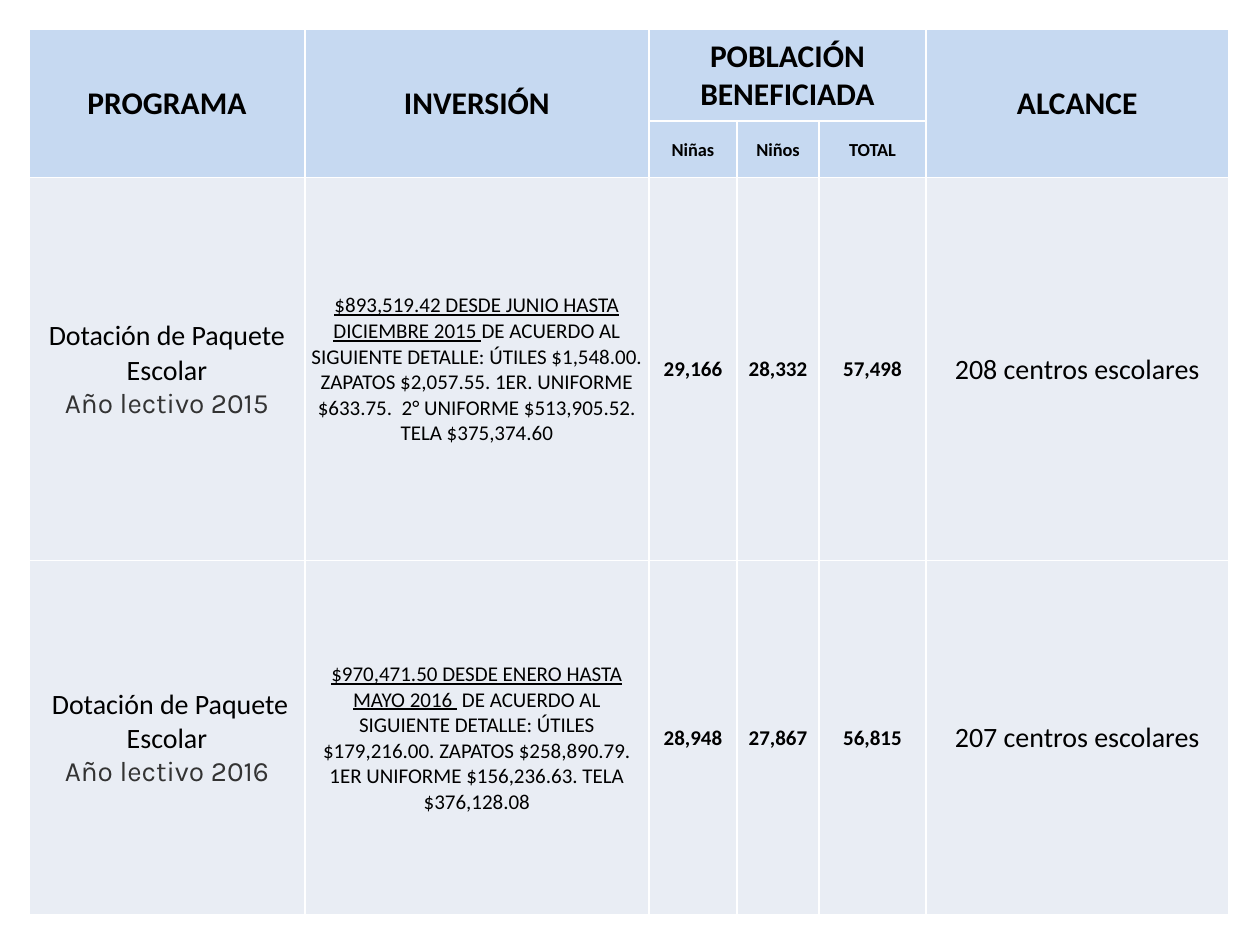
from lxml.etree import SubElement
from pptx import Presentation
from pptx.dml.color import RGBColor
from pptx.enum.text import MSO_ANCHOR, PP_ALIGN
from pptx.oxml.ns import qn
from pptx.util import Inches, Pt

COLORS = {
    "header": "C6D9F1",
    "body": "E9EDF4",
    "border": "FFFFFF",
    "text": "000000",
    "year": "333333",
}
COLUMN_WIDTHS = [2.19, 2.73, 0.7, 0.65, 0.85, 2.4]
ROW_HEIGHTS = [0.73, 0.45, 3.04, 2.81]
MARGIN = 0.23
HEADER_ROWS = 2

MAIN_HEADERS = {0: "PROGRAMA", 1: "INVERSIÓN", 2: "POBLACIÓN BENEFICIADA", 5: "ALCANCE"}
POPULATION_HEADERS = ["Niñas", "Niños", "TOTAL"]
PROGRAMS = [
    {
        "name": "Dotación de Paquete Escolar",
        "year": "Año lectivo 2015",
        "amount": "$893,519.42 DESDE JUNIO HASTA DICIEMBRE 2015 ",
        "detail": "DE ACUERDO AL SIGUIENTE DETALLE: ÚTILES $1,548.00. ZAPATOS $2,057.55. "
                  "1ER. UNIFORME $633.75.  2° UNIFORME $513,905.52. TELA $375,374.60",
        "population": ["29,166", "28,332", "57,498"],
        "reach": "208 centros escolares",
    },
    {
        "name": " Dotación de Paquete Escolar",
        "year": "Año lectivo 2016",
        "amount": "$970,471.50 DESDE ENERO HASTA MAYO 2016 ",
        "detail": " DE ACUERDO AL SIGUIENTE DETALLE: ÚTILES $179,216.00. ZAPATOS $258,890.79. "
                  "1ER UNIFORME $156,236.63. TELA $376,128.08",
        "population": ["28,948", "27,867", "56,815"],
        "reach": "207 centros escolares",
    },
]


def add_text(paragraph, text, size=16, font="Calibri", color="text", bold=False, underline=False):
    paragraph.alignment = PP_ALIGN.CENTER
    run = paragraph.add_run()
    run.text = text
    run.font.size = Pt(size)
    run.font.name = font
    run.font.bold = bold
    run.font.underline = underline
    run.font.color.rgb = RGBColor.from_string(COLORS[color])


def add_borders(cell):
    properties = cell._tc.get_or_add_tcPr()
    for position, side in enumerate(("lnL", "lnR", "lnT", "lnB")):
        line = SubElement(properties, qn(f"a:{side}"), w=str(Pt(1)))
        fill = SubElement(line, qn("a:solidFill"))
        SubElement(fill, qn("a:srgbClr"), val=COLORS["border"])
        properties.insert(position, line)


def format_cell(cell, color):
    cell.fill.solid()
    cell.fill.fore_color.rgb = RGBColor.from_string(COLORS[color])
    cell.vertical_anchor = MSO_ANCHOR.MIDDLE
    cell.margin_left = cell.margin_right = cell.margin_top = Inches(0.01)
    cell.margin_bottom = 0
    add_borders(cell)


def add_grid(slide):
    table = slide.shapes.add_table(
        len(ROW_HEIGHTS), len(COLUMN_WIDTHS), Inches(MARGIN), Inches(MARGIN),
        Inches(sum(COLUMN_WIDTHS)), Inches(sum(ROW_HEIGHTS)),
    ).table
    table.first_row = table.horz_banding = False
    for column, width in zip(table.columns, COLUMN_WIDTHS):
        column.width = Inches(width)
    for index, (row, height) in enumerate(zip(table.rows, ROW_HEIGHTS)):
        row.height = Inches(height)
        for cell in row.cells:
            format_cell(cell, "header" if index < HEADER_ROWS else "body")
    return table


def first_paragraph(table, row, column):
    return table.cell(row, column).text_frame.paragraphs[0]


def fill_headers(table):
    for column in (0, 1, 5):
        table.cell(0, column).merge(table.cell(1, column))
    table.cell(0, 2).merge(table.cell(0, 4))
    for column, text in MAIN_HEADERS.items():
        add_text(first_paragraph(table, 0, column), text, size=18, bold=True)
    for column, text in enumerate(POPULATION_HEADERS, start=2):
        add_text(first_paragraph(table, 1, column), text, size=10.5, bold=True)


def fill_program(table, row, program):
    add_text(first_paragraph(table, row, 0), program["name"])
    year = table.cell(row, 0).text_frame.add_paragraph()
    add_text(year, program["year"], font="Karla", color="year")
    investment = first_paragraph(table, row, 1)
    add_text(investment, program["amount"], size=12, underline=True)
    add_text(investment, program["detail"], size=12)
    for column, count in enumerate(program["population"], start=2):
        add_text(first_paragraph(table, row, column), count, size=12, bold=True)
    add_text(first_paragraph(table, row, 5), program["reach"])


def main():
    presentation = Presentation()
    presentation.slide_width = Inches(10)
    presentation.slide_height = Inches(7.5)
    slide = presentation.slides.add_slide(presentation.slide_layouts[6])
    table = add_grid(slide)
    fill_headers(table)
    for row, program in enumerate(PROGRAMS, start=HEADER_ROWS):
        fill_program(table, row, program)
    presentation.save("out.pptx")


if __name__ == "__main__":
    main()
